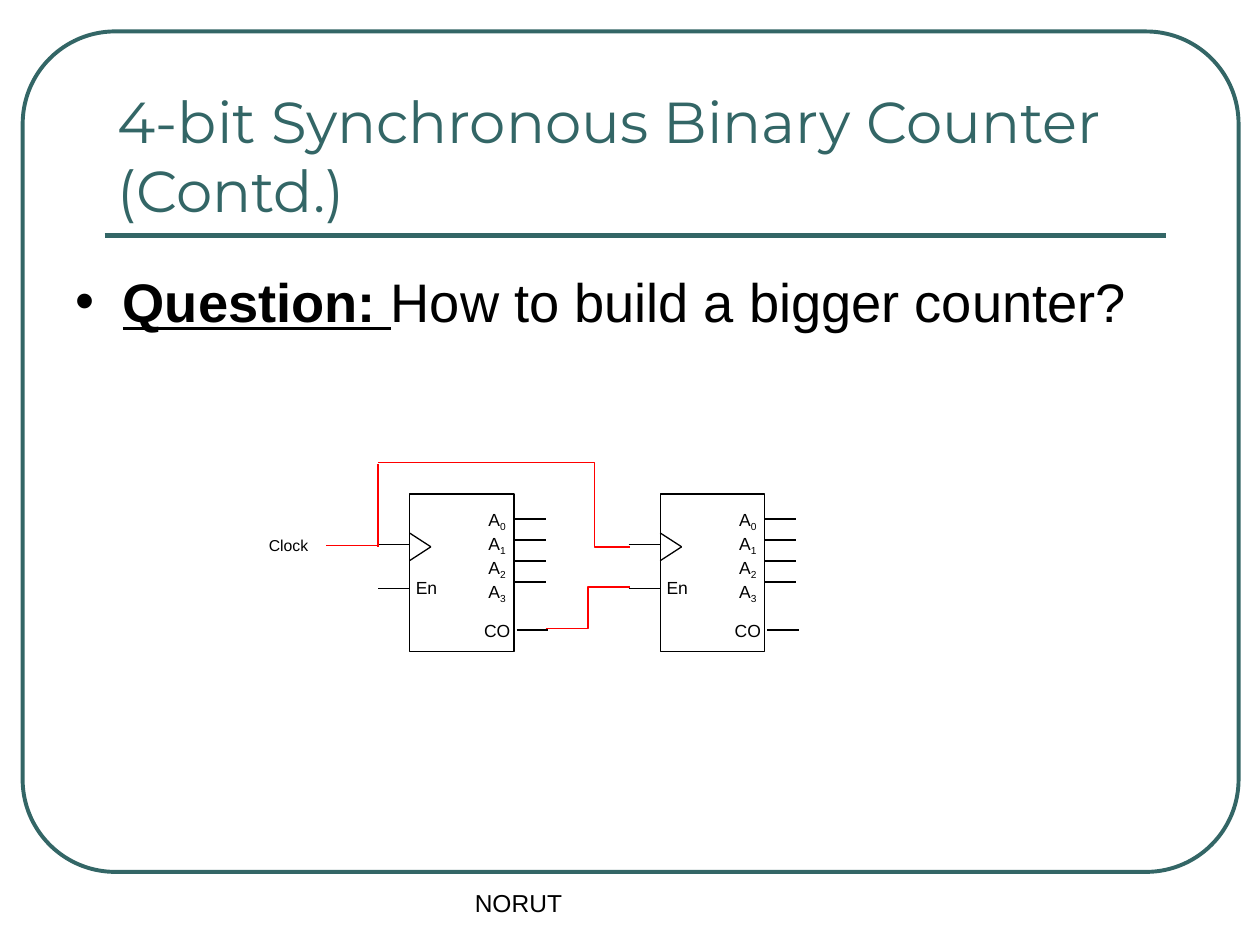
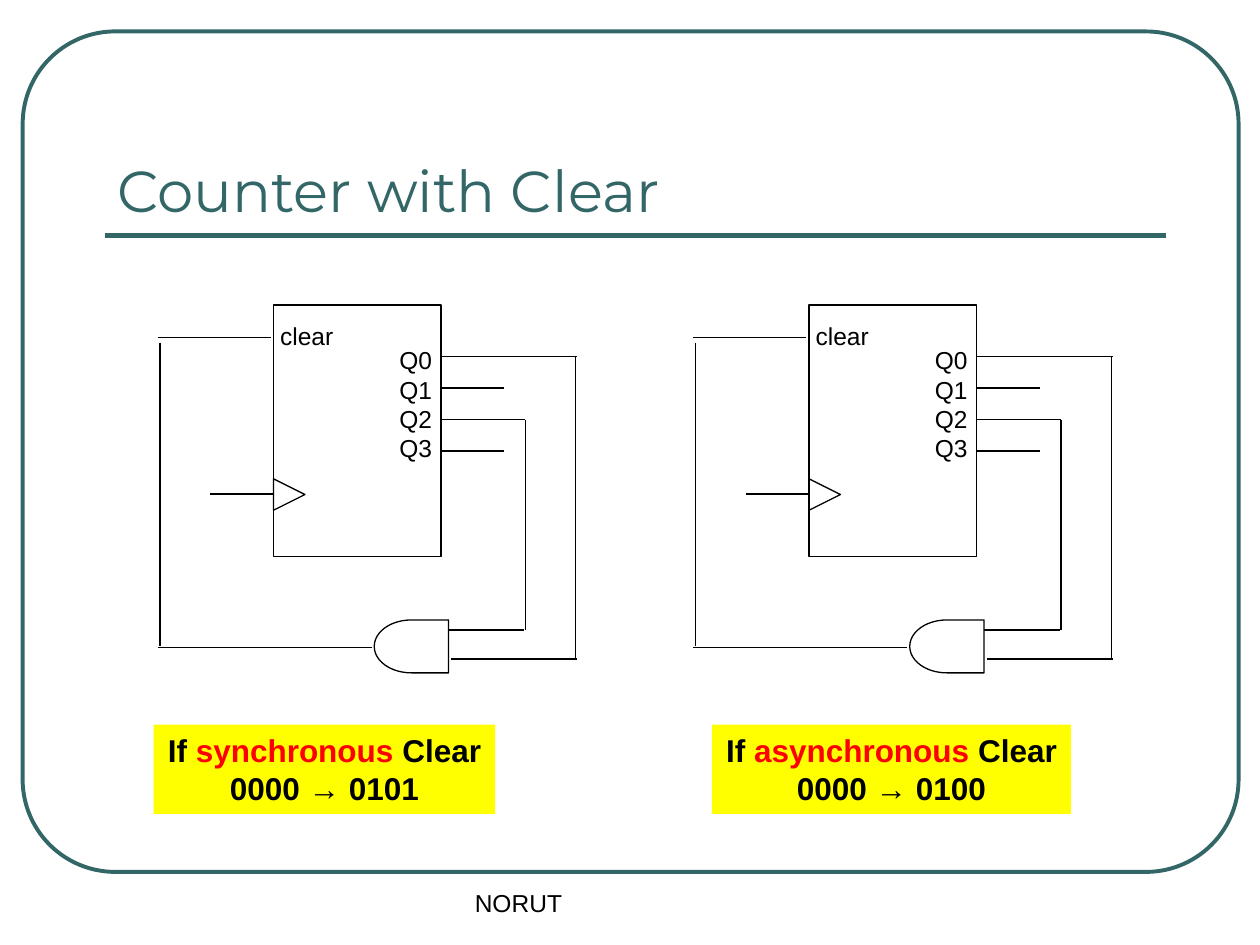
import pptx
import pptx.util
import pptx.dml.color
import pptx.enum.shapes
import pptx.enum.text
import pptx.oxml.ns
import lxml.etree

Inches, Pt = pptx.util.Inches, pptx.util.Pt
KIND = pptx.enum.shapes.MSO_SHAPE
WIRE = pptx.enum.shapes.MSO_CONNECTOR
ALIGN = pptx.enum.text.PP_ALIGN
ANCHOR = pptx.enum.text.MSO_ANCHOR
FIT = pptx.enum.text.MSO_AUTO_SIZE
COLORS = {"teal": "336666", "ink": "000000", "red": "FF0000",
          "yellow": "FFFF00", "white": "FFFFFF"}


def hue(name):
    return pptx.dml.color.RGBColor.from_string(COLORS[name])


def write(para, text, size=14, font="Arial", color="ink", bold=False,
          under=False, base=0):
    """Add one run of text to a paragraph."""
    run = para.add_run()
    run.text = text
    run.font.size, run.font.name = Pt(size), font
    run.font.bold, run.font.underline = bold, under
    run.font.color.rgb = hue(color)
    if base:
        run._r.get_or_add_rPr().set("baseline", str(base * 1000))


class Deck:
    def __init__(self):
        self.prs = pptx.Presentation()
        self.prs.slide_width, self.prs.slide_height = Inches(10), Inches(7.5)

    def place(self, shape, left, top, width, height):
        shape.left, shape.top = Inches(left), Inches(top)
        shape.width, shape.height = Inches(width), Inches(height)

    def start(self, title, layout):
        """Add a slide with frame, rule, title and footer."""
        self.slide = self.prs.slides.add_slide(self.prs.slide_layouts[layout])
        self.shapes = self.slide.shapes
        frame = self.shape(KIND.ROUNDED_RECTANGLE, 0.18, 0.25, 9.65, 6.67,
                           color="teal", weight=2.25)
        frame.adjustments[0] = 0.11
        self.line(0.83, 1.87, 9.25, 1.87, "teal", 3)
        head = self.shapes.title
        self.place(head, 0.83, 0.58, 8.41, 1.25)
        box = head.text_frame
        box.vertical_anchor, box.auto_size = ANCHOR.BOTTOM, FIT.NONE
        box.paragraphs[0].alignment = ALIGN.LEFT
        write(box.paragraphs[0], title, size=33, font="Montserrat", color="teal")
        self.text([[("NORUT", {})]], 3.67, 7, 3.16, 0.5, wrap=True)

    def body(self, runs, left, top, width, height):
        hold = self.slide.placeholders[1]
        self.place(hold, left, top, width, height)
        hold.text_frame.auto_size = FIT.NONE
        para = hold.text_frame.paragraphs[0]
        para.space_before = Pt(7.8)
        for text, form in runs:
            write(para, text, **form)

    def shape(self, kind, left, top, width, height, fill=None, color="ink",
              weight=0.75, turn=0):
        item = self.shapes.add_shape(kind, Inches(left), Inches(top),
                                     Inches(width), Inches(height))
        item.shadow.inherit = False
        if fill:
            item.fill.solid()
            item.fill.fore_color.rgb = hue(fill)
        else:
            item.fill.background()
        item.line.color.rgb, item.line.width = hue(color), Pt(weight)
        item.rotation = turn
        return item

    def line(self, x1, y1, x2, y2, color="ink", weight=0.75, bend=None):
        """Draw a straight line, or an elbow that turns at share bend."""
        kind = WIRE.ELBOW if bend else WIRE.STRAIGHT
        item = self.shapes.add_connector(kind, Inches(x1), Inches(y1),
                                         Inches(x2), Inches(y2))
        item.line.color.rgb, item.line.width = hue(color), Pt(weight)
        qn = pptx.oxml.ns.qn
        props = item._element.spPr
        lxml.etree.SubElement(props, qn("a:effectLst"))
        if bend:
            geom = props.find(qn("a:prstGeom"))
            guides = geom.find(qn("a:avLst"))
            if guides is None:
                guides = lxml.etree.SubElement(geom, qn("a:avLst"))
            lxml.etree.SubElement(guides, qn("a:gd"), name="adj1",
                                  fmla=f"val {round(bend * 100000)}")

    def text(self, paras, left, top, width, height, wrap=False, fill=None):
        """Add a text box; each paragraph is a list of (text, format)."""
        item = self.shapes.add_textbox(Inches(left), Inches(top),
                                       Inches(width), Inches(height))
        if fill:
            item.fill.solid()
            item.fill.fore_color.rgb = hue(fill)
        box = item.text_frame
        box.word_wrap = wrap
        box.auto_size = FIT.NONE if wrap else FIT.SHAPE_TO_FIT_TEXT
        for num, runs in enumerate(paras):
            para = box.add_paragraph() if num else box.paragraphs[0]
            para.alignment = ALIGN.LEFT if wrap else ALIGN.CENTER
            for text, form in runs:
                write(para, text, **form)

    def chip(self, x):
        """Draw a 4-bit counter block with its left edge at x."""
        small = {"size": 10}
        self.shape(KIND.RECTANGLE, x, 3.92, 0.83, 1.25)
        for bit in range(4):
            y = 4.12 + bit / 6
            self.line(x + 0.83, y, x + 1.08, y)
        for y in (4.32, 4.67):
            self.line(x - 0.25, y, x, y)
        for y in (4.23, 4.45):
            self.line(x, y, x + 0.17, 4.34)
        self.line(x + 0.85, 5, x + 1.1, 5)
        names = [[("A", small), (str(bit), {"size": 10, "base": -25})]
                 for bit in range(4)]
        self.text(names, x + 0.52, 3.99, 0.35, 0.77)
        self.text([[("CO", small)]], x + 0.49, 4.87, 0.41, 0.27)
        self.text([[("En", small)]], x - 0.05, 4.53, 0.37, 0.27)

    def loop(self, x):
        """Draw a counter with its clear gate, block edge at x."""
        self.shape(KIND.RECTANGLE, x, 2.42, 1.33, 2)
        self.text([[("clear", {})]], x - 0.05, 2.5, 0.63, 0.34)
        self.text([[(f"Q{bit}", {})] for bit in range(4)],
                  x + 0.9, 2.69, 0.46, 1.04)
        # Outputs
        for bit, reach in enumerate((1.08, 0.5, 0.67, 0.5)):
            y = 2.83 + bit * 0.25
            self.line(x + 1.33, y, x + 1.33 + reach, y)
        # Clock input
        self.shape(KIND.ISOSCELES_TRIANGLE, x, 3.8, 0.25, 0.25, turn=90)
        self.line(x - 0.5, 3.92, x, 3.92)
        # Gate and feedback wires
        for x1, y1, x2, y2 in ((-0.92, 2.68, -0.02, 2.68),
                               (1.41, 5.23, 2.41, 5.23),
                               (1.33, 5, 1.99, 5),
                               (2, 3.33, 2, 5),
                               (2.4, 2.83, 2.4, 5.22),
                               (-0.92, 5.14, 0.78, 5.14),
                               (-0.9, 2.72, -0.9, 5.13)):
            self.line(x + x1, y1, x + x2, y2)
        self.shape(KIND.FLOWCHART_DELAY, x + 0.8, 4.92, 0.59, 0.42,
                   fill="white", turn=180)

    def note(self, word, count, left, width):
        bold = {"size": 18, "bold": True}
        self.text([[("If ", bold), (word, {**bold, "color": "red"}),
                    (" Clear", bold)], [(count, bold)]],
                  left, 5.75, width, 0.71, fill="yellow")


def main():
    deck = Deck()

    # Two chained counters
    deck.start("4-bit Synchronous Binary Counter (Contd.)", 1)
    deck.body([("Question: ", {"size": 31, "bold": True, "under": True}),
               ("How to build a bigger counter?", {"size": 31})],
              0.5, 2.08, 9.17, 1.17)
    for x in (5.24, 3.25):
        deck.chip(x)
    deck.line(4.33, 4.99, 5, 4.66, "red", 1, bend=0.5)
    deck.line(3.01, 4.33, 2.59, 4.33, "red", 1)
    deck.line(3, 4.34, 3, 3.68, "red", 1)
    deck.line(3, 3.67, 5, 4.34, "red", 1, bend=0.86)
    deck.text([[("Clock", {"size": 9})]], 2.03, 4.2, 0.52, 0.25)

    # Two ways to clear
    deck.start("Counter with Clear", 5)
    for x in (2.17, 6.42):
        deck.loop(x)
    deck.note("synchronous", "0000 → 0101", 1.22, 2.71)
    deck.note("asynchronous", "0000 → 0100", 5.65, 2.85)

    deck.prs.save("out.pptx")


if __name__ == "__main__":
    main()
